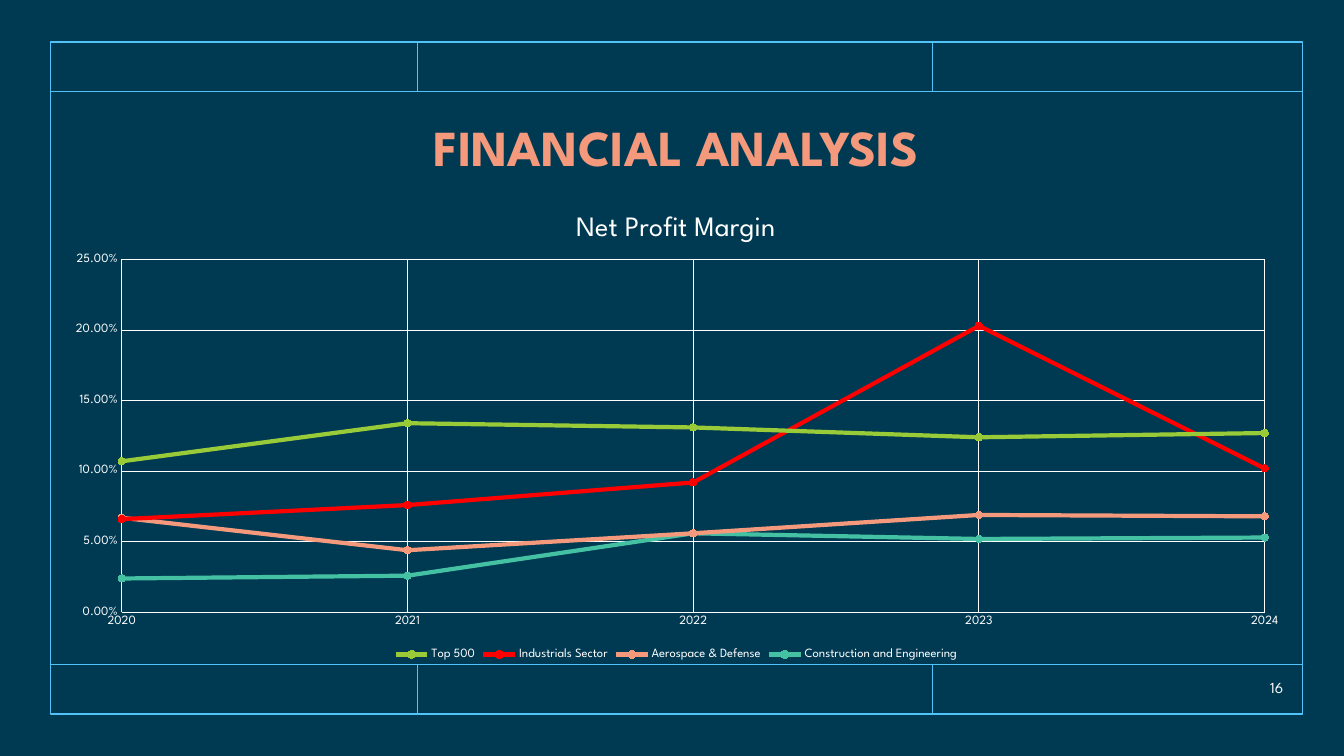
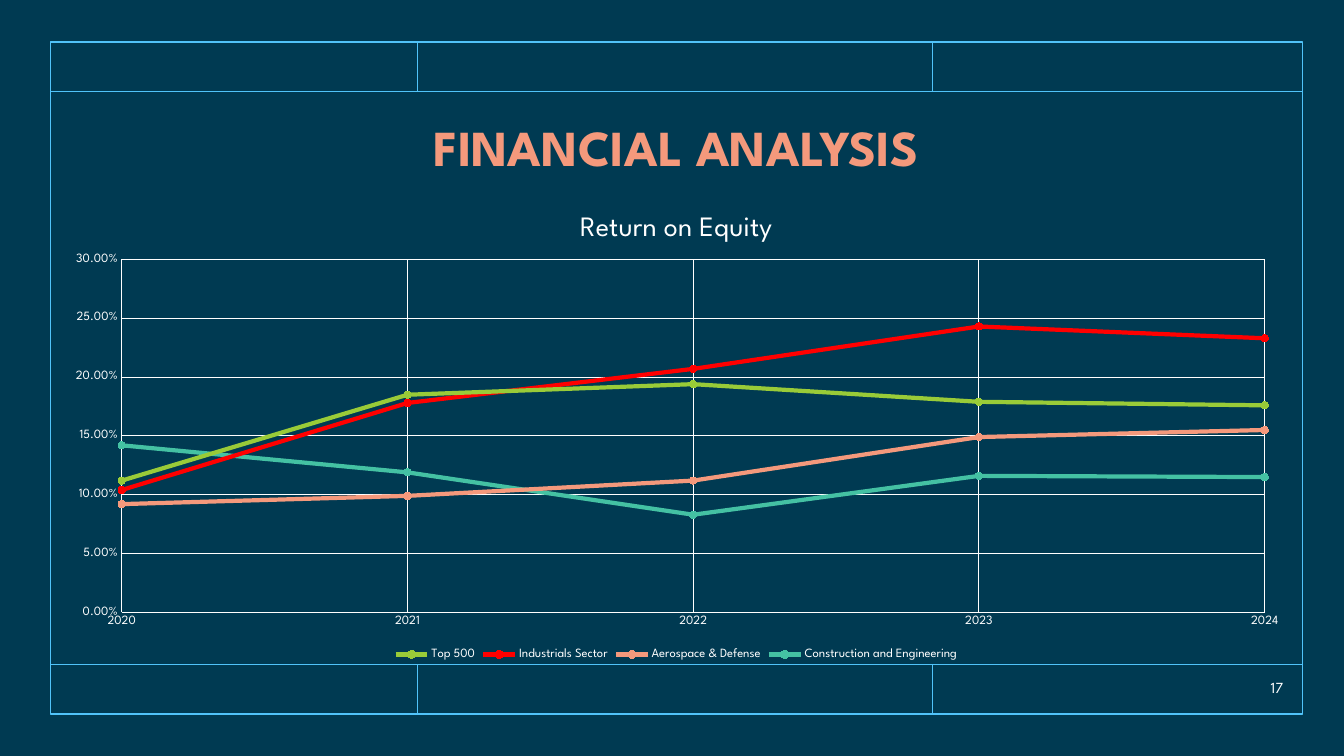
from dataclasses import dataclass

from lxml.etree import SubElement
from pptx import Presentation
from pptx.chart.data import XyChartData
from pptx.dml.color import RGBColor as Rgb
from pptx.enum.chart import XL_CHART_TYPE as ChartType
from pptx.enum.chart import XL_LEGEND_POSITION as LegendPosition
from pptx.enum.chart import XL_MARKER_STYLE as MarkerStyle
from pptx.enum.chart import XL_TICK_MARK as TickMark
from pptx.enum.shapes import MSO_CONNECTOR as Connector
from pptx.enum.shapes import MSO_SHAPE as Shape
from pptx.enum.text import MSO_ANCHOR as Anchor
from pptx.enum.text import PP_ALIGN as Align
from pptx.oxml.ns import qn
from pptx.util import Cm, Pt


@dataclass(frozen=True)
class Theme:
    font: str = "League Spartan"
    background: str = "003A52"
    frame: str = "51C3F9"
    heading: str = "F4997C"
    text: str = "FFFFFF"
    heading_size: float = 36
    metric_size: float = 20
    number_size: float = 11
    label_size: float = 9
    frame_width: float = 1
    grid_width: float = 0.75
    series_width: float = 3
    marker_size: int = 5


THEME = Theme()

HEADING = "FINANCIAL ANALYSIS"
YEARS = [2024, 2023, 2022, 2021, 2020]
GROUPS = [
    ("Top 500", "99CB38"),
    ("Industrials Sector", "FF0000"),
    ("Aerospace & Defense", "F4997C"),
    ("Construction and Engineering", "44C1A3"),
]
METRICS = [
    {
        "number": 16,
        "name": "Net Profit Margin",
        "top": 0.25,
        "values": [
            [0.127, 0.124, 0.131, 0.134, 0.107],
            [0.102, 0.203, 0.092, 0.076, 0.066],
            [0.068, 0.069, 0.056, 0.044, 0.067],
            [0.053, 0.052, 0.056, 0.026, 0.024],
        ],
    },
    {
        "number": 17,
        "name": "Return on Equity",
        "top": 0.3,
        "values": [
            [0.176, 0.179, 0.194, 0.185, 0.112],
            [0.233, 0.243, 0.207, 0.178, 0.104],
            [0.155, 0.149, 0.112, 0.099, 0.092],
            [0.115, 0.116, 0.083, 0.119, 0.142],
        ],
    },
]

SLIDE_SIZE = (33.87, 19.05)
LEFT, TOP, WIDTH, HEIGHT = 1.27, 1.06, 31.55, 16.93
RIGHT, BOTTOM = LEFT + WIDTH, TOP + HEIGHT
BAND = 1.25
BAND_DIVIDERS = (10.52, 23.5)
HEADING_HEIGHT = 2.97
CHART_TOP = 4.88
NUMBER_BOX = (30.25, 16.94, 2.34, 0.76)
PLOT_AREA = {"x": 0.06, "y": 0.14, "w": 0.91, "h": 0.75}
PLOT_AREA = {"x": 0.057, "y": 0.14, "w": 0.913, "h": 0.75}


def cm(*lengths):
    return [Cm(length) for length in lengths]


def apply(target, formats):
    for attribute, value in formats.items():
        setattr(target, attribute, value)


def style_font(font, size, color=THEME.text, bold=False):
    apply(font, {"name": THEME.font, "size": Pt(size), "bold": bold})
    font.color.rgb = Rgb.from_string(color)


def style_line(line, color, width):
    line.color.rgb = Rgb.from_string(color)
    line.width = Pt(width)


def add_frame(slide, layout):
    border = slide.shapes.add_shape(Shape.RECTANGLE, *cm(LEFT, TOP, WIDTH, HEIGHT))
    border.shadow.inherit = False
    border.fill.background()
    style_line(border.line, THEME.frame, THEME.frame_width)
    layout.shapes.element.append(border.element)

    bands = [(TOP, TOP + BAND), (BOTTOM - BAND, BOTTOM)]
    rules = [(LEFT, y, RIGHT, y) for y in (TOP + BAND, BOTTOM - BAND)]
    rules += [(x, start, x, end) for x in BAND_DIVIDERS for start, end in bands]
    for ends in rules:
        rule = slide.shapes.add_connector(Connector.STRAIGHT, *cm(*ends))
        style_line(rule.line, THEME.frame, THEME.frame_width)
        SubElement(rule.element.spPr, qn("a:effectLst"))
        layout.shapes.element.append(rule.element)


def add_heading(slide):
    heading = slide.shapes.title
    box = cm(LEFT, TOP + BAND, WIDTH, HEADING_HEIGHT)
    apply(heading, dict(zip(("left", "top", "width", "height"), box)))
    heading.text_frame.text = HEADING
    heading.text_frame.vertical_anchor = Anchor.MIDDLE
    paragraph = heading.text_frame.paragraphs[0]
    apply(paragraph, {"alignment": Align.CENTER, "line_spacing": 0.9})
    style_font(paragraph.runs[0].font, THEME.heading_size, THEME.heading, True)


def add_number(slide, number):
    frame = slide.shapes.add_textbox(*cm(*NUMBER_BOX)).text_frame
    apply(frame, {"word_wrap": True, "vertical_anchor": Anchor.MIDDLE})
    paragraph = frame.paragraphs[0]
    paragraph.text = str(number)
    apply(paragraph, {"alignment": Align.RIGHT, "space_after": Pt(6)})
    style_font(paragraph.runs[0].font, THEME.number_size)


def style_axis(axis, scale, number_format):
    apply(axis, {
        **scale,
        "has_title": False,
        "has_major_gridlines": True,
        "major_tick_mark": TickMark.NONE,
        "minor_tick_mark": TickMark.NONE,
    })
    apply(axis.tick_labels, {
        "number_format": number_format,
        "number_format_is_linked": False,
    })
    style_font(axis.tick_labels.font, THEME.label_size)
    for line in (axis.format.line, axis.major_gridlines.format.line):
        style_line(line, THEME.text, THEME.grid_width)


def place_plot(chart):
    plot_area = chart.element.find(".//" + qn("c:plotArea"))
    layout = plot_area.find(qn("c:layout"))
    if layout is None:
        layout = SubElement(plot_area, qn("c:layout"))
        plot_area.insert(0, layout)
    manual = SubElement(layout, qn("c:manualLayout"))
    settings = {"layoutTarget": "inner", "xMode": "edge", "yMode": "edge", **PLOT_AREA}
    for tag, value in settings.items():
        SubElement(manual, qn("c:" + tag)).set("val", str(value))


def add_metric_chart(slide, metric):
    data = XyChartData(number_format="0.00%")
    for (name, _), values in zip(GROUPS, metric["values"]):
        group = data.add_series(name)
        for year, value in zip(YEARS, values):
            group.add_data_point(year, value)
    box = cm(LEFT, CHART_TOP, WIDTH, BOTTOM - BAND - CHART_TOP)
    chart = slide.shapes.add_chart(ChartType.XY_SCATTER_LINES, *box, data).chart
    style_font(chart.font, THEME.label_size)
    apply(chart, {"has_title": True, "has_legend": True})

    caption = chart.chart_title.text_frame
    caption.text = metric["name"]
    style_font(caption.paragraphs[0].runs[0].font, THEME.metric_size)
    apply(chart.legend, {"position": LegendPosition.BOTTOM, "include_in_layout": False})
    style_font(chart.legend.font, THEME.label_size)

    years = {"minimum_scale": min(YEARS), "maximum_scale": max(YEARS), "major_unit": 1}
    shares = {"minimum_scale": 0, "maximum_scale": metric["top"], "major_unit": 0.05}
    style_axis(chart.category_axis, years, "General")
    style_axis(chart.value_axis, shares, "0.00%")
    place_plot(chart)

    plot = chart.plots[0]
    plot.vary_by_categories = False
    for group, (_, color) in zip(plot.series, GROUPS):
        style_line(group.format.line, color, THEME.series_width)
        apply(group.marker, {"style": MarkerStyle.CIRCLE, "size": THEME.marker_size})
        group.marker.format.fill.solid()
        group.marker.format.fill.fore_color.rgb = Rgb.from_string(color)
        style_line(group.marker.format.line, color, THEME.grid_width)


def main():
    deck = Presentation()
    apply(deck, dict(zip(("slide_width", "slide_height"), cm(*SLIDE_SIZE))))
    layout = deck.slide_layouts.get_by_name("Title Only")
    layout.background.fill.solid()
    layout.background.fill.fore_color.rgb = Rgb.from_string(THEME.background)
    for position, metric in enumerate(METRICS):
        slide = deck.slides.add_slide(layout)
        if position == 0:
            add_frame(slide, layout)
        add_heading(slide)
        add_number(slide, metric["number"])
        add_metric_chart(slide, metric)
    deck.save("out.pptx")


if __name__ == "__main__":
    main()
